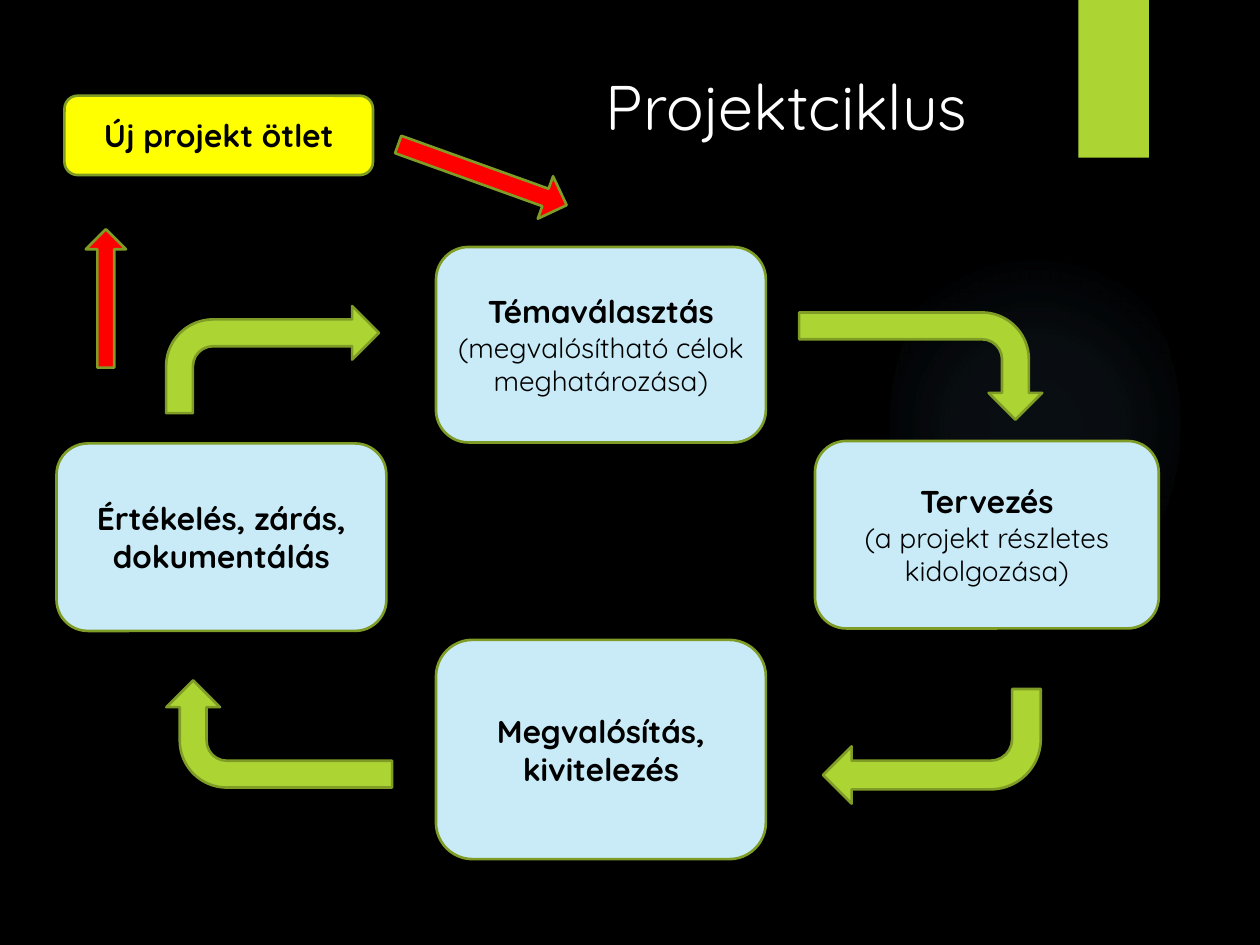
from dataclasses import dataclass

from lxml import etree
from pptx import Presentation
from pptx.dml.color import RGBColor
from pptx.enum.shapes import MSO_SHAPE as Kind
from pptx.enum.text import MSO_ANCHOR as Anchor, PP_ALIGN as Align
from pptx.oxml import parse_xml
from pptx.oxml.ns import nsdecls, qn
from pptx.shapes.autoshape import Shape
from pptx.slide import Slide
from pptx.util import Cm, Pt

FONT = "Quicksand"
BLACK, WHITE = "000000", "FFFFFF"
GREEN, OUTLINE = "ACD433", "7F9D26"
PALE_BLUE, YELLOW, RED, GLOW = "C8EBF7", "FFFF00", "FF0000", "7AC4F0"

Bounds = tuple[float, float, float, float]


@dataclass
class Stage:
    bounds: Bounds
    heading: str
    detail: str = ""
    fill: str = PALE_BLUE


@dataclass
class Arrow:
    bounds: Bounds
    rotation: float = 0
    kind: Kind = Kind.BENT_ARROW
    fill: str = GREEN
    shaft: float = 0.25


STAGES = [
    Stage((8.79, 4.98, 6.65, 3.94), "Témaválasztás", "(megvalósítható célok meghatározása)"),
    Stage((16.43, 8.89, 6.93, 3.78), "Tervezés", "(a projekt részletes kidolgozása)"),
    Stage((8.79, 12.9, 6.65, 4.42), "Megvalósítás, kivitelezés"),
    Stage((1.14, 8.94, 6.65, 3.78), "Értékelés, zárás, dokumentálás"),
    Stage((1.3, 1.93, 6.22, 1.6), "Új projekt ötlet", fill=YELLOW),
]

ARROWS = [
    Arrow((17.48, 4.93, 2.16, 4.9), 90),
    Arrow((16.59, 13.89, 4.39, 2.31), 180),
    Arrow((4.55, 12.52, 2.16, 4.55), 270),
    Arrow((3.35, 6.17, 4.29, 2.16)),
    Arrow((0.74, 5.61, 2.79, 0.81), 270, Kind.RIGHT_ARROW, RED, 0.42),
    Arrow((7.92, 3.07, 3.61, 0.91), 19.8, Kind.RIGHT_ARROW, RED, 0.41),
]


def color(value: str) -> RGBColor:
    return RGBColor.from_string(value)


def add_shape(page: Slide, kind: Kind, bounds: Bounds, fill: str, line: str = "") -> Shape:
    shape = page.shapes.add_shape(kind, *map(Cm, bounds))
    shape.shadow.inherit = False
    shape.fill.solid()
    shape.fill.fore_color.rgb = color(fill)
    if line:
        shape.line.color.rgb = color(line)
        shape.line.width = Pt(1.5)
    else:
        shape.line.fill.background()
    return shape


def add_glow(page: Slide) -> None:
    glow = add_shape(page, Kind.OVAL, (17.93, 4.65, 5.87, 7.82), GLOW)
    stops = "".join(
        f'<a:gs pos="{position}000"><a:srgbClr val="{GLOW}">'
        f'<a:alpha val="{alpha}000"/></a:srgbClr></a:gs>'
        for position, alpha in [(0, 7), (36, 6), (69, 0)]
    )
    gradient: etree.ElementBase = parse_xml(
        f'<a:gradFill {nsdecls("a")}><a:gsLst>{stops}</a:gsLst><a:path path="circle">'
        '<a:fillToRect l="50000" t="50000" r="50000" b="50000"/></a:path></a:gradFill>'
    )
    properties = glow.element.spPr
    properties.replace(properties.find(qn("a:solidFill")), gradient)


def add_title(page: Slide, text: str) -> None:
    title = page.shapes.title
    title.left, title.top, title.width, title.height = map(Cm, (11.96, 1.19, 8.94, 1.85))
    title.text_frame.text = text
    title.text_frame.vertical_anchor = Anchor.MIDDLE
    para = title.text_frame.paragraphs[0]
    para.alignment = Align.LEFT
    font = para.runs[0].font
    font.name, font.size = FONT, Pt(36)
    font.color.rgb = color(WHITE)


def add_stage(page: Slide, stage: Stage) -> None:
    box = add_shape(page, Kind.ROUNDED_RECTANGLE, stage.bounds, stage.fill, OUTLINE)
    frame = box.text_frame
    frame.word_wrap = True
    frame.vertical_anchor = Anchor.MIDDLE
    frame.text = "\n".join(filter(None, (stage.heading, stage.detail)))
    for index, para in enumerate(frame.paragraphs):
        para.alignment = Align.CENTER
        font = para.runs[0].font
        font.name = FONT
        font.size = Pt(16 if index else 18)
        font.bold = index == 0
        font.color.rgb = color(BLACK)


def add_arrow(page: Slide, arrow: Arrow) -> None:
    shape = add_shape(page, arrow.kind, arrow.bounds, arrow.fill, OUTLINE)
    shape.rotation = arrow.rotation
    shape.adjustments[0] = arrow.shaft


def main() -> None:
    deck = Presentation()
    deck.slide_width, deck.slide_height = Cm(25.4), Cm(19.05)
    page = deck.slides.add_slide(deck.slide_layouts[5])
    page.background.fill.solid()
    page.background.fill.fore_color.rgb = color(BLACK)
    add_glow(page)
    add_shape(page, Kind.RECTANGLE, (21.74, 0, 1.42, 3.18), GREEN)
    add_title(page, "Projektciklus")
    for stage in STAGES:
        add_stage(page, stage)
    for arrow in ARROWS:
        add_arrow(page, arrow)
    deck.save("out.pptx")


if __name__ == "__main__":
    main()
